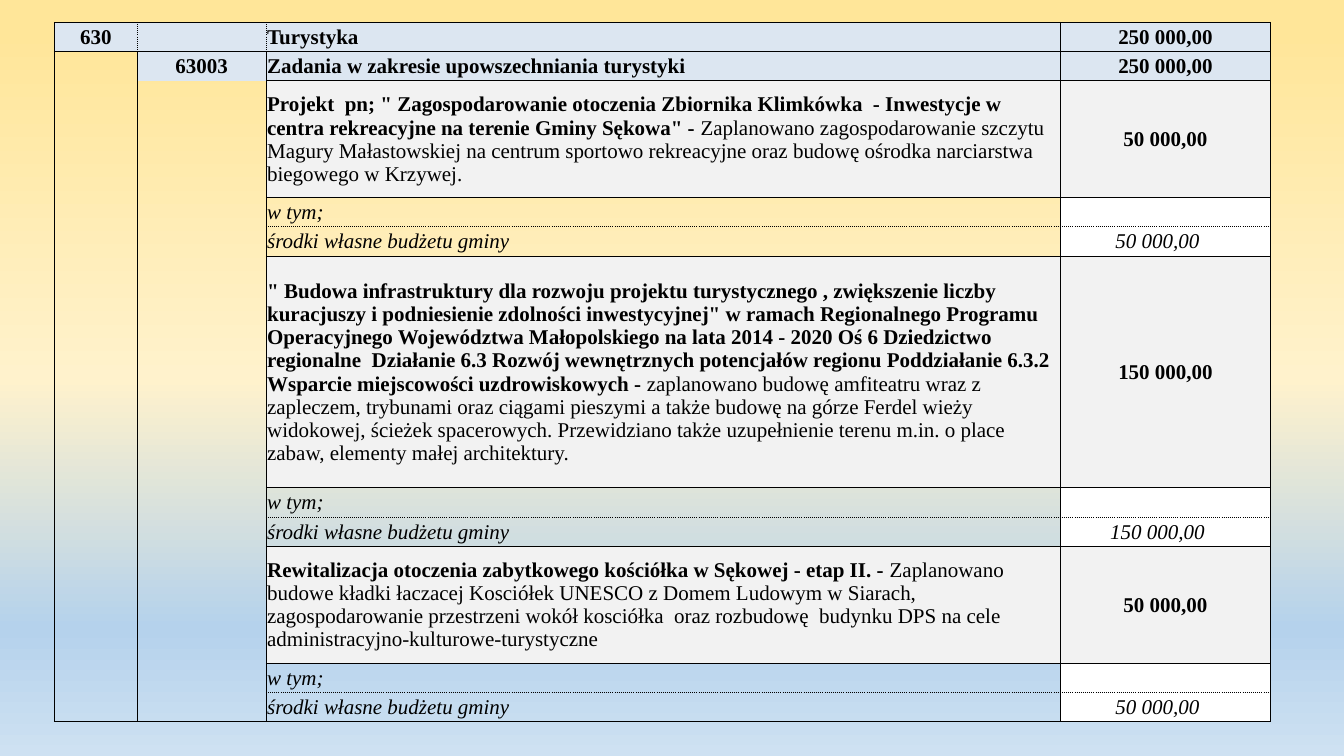
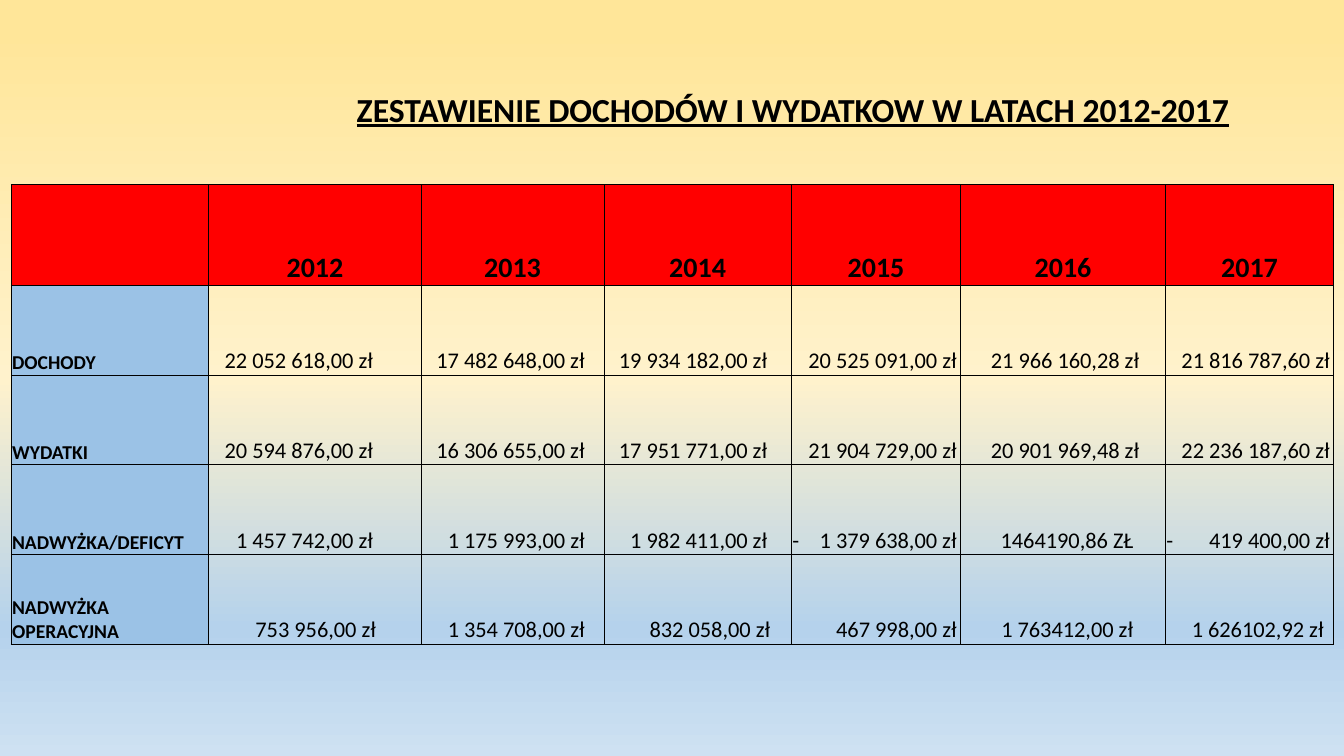
import pptx
import pptx.dml.color
import pptx.enum.text
import pptx.oxml.ns
import pptx.util
from lxml import etree

ANCHOR = pptx.enum.text.MSO_ANCHOR
ALIGN = pptx.enum.text.PP_ALIGN
inch = pptx.util.Inches
qname = pptx.oxml.ns.qn

# Shared look
BLACK, WHITE = "000000", "FFFFFF"
PALE_BLUE, PALE_GREY = "DCE6F1", "F2F2F2"
RED, BLUE = "FF0000", "9BC2E6"
BACKGROUND = [(4, "FFE699"), (50, "FFF2CC"), (83, "B5D2EC"), (100, "CEE1F2")]
THIN, THICK, DOTTED = (0.5, "solid"), (1, "solid"), (0.5, "dot")

# Tourism spending: title in bold, description, amount
TOURISM_HEADS = [("630", "", "Turystyka", "250 000,00"),
                 ("", "63003", "Zadania w zakresie upowszechniania turystyki", "250 000,00")]
TASKS = [
    ('Projekt  pn; " Zagospodarowanie otoczenia Zbiornika Klimkówka  - Inwestycje w centra '
     'rekreacyjne na terenie Gminy Sękowa" - ',
     "Zaplanowano zagospodarowanie szczytu Magury Małastowskiej na centrum sportowo "
     "rekreacyjne oraz budowę ośrodka narciarstwa biegowego w Krzywej.",
     "50 000,00"),
    ('" Budowa infrastruktury dla rozwoju projektu turystycznego , zwiększenie liczby '
     'kuracjuszy i podniesienie zdolności inwestycyjnej" w ramach Regionalnego Programu '
     "Operacyjnego Województwa Małopolskiego na lata 2014 - 2020 Oś 6 Dziedzictwo regionalne  "
     "Działanie 6.3 Rozwój wewnętrznych potencjałów regionu Poddziałanie 6.3.2 Wsparcie "
     "miejscowości uzdrowiskowych - ",
     "zaplanowano budowę amfiteatru wraz z zapleczem, trybunami oraz ciągami pieszymi a także "
     "budowę na górze Ferdel wieży widokowej, ścieżek spacerowych. Przewidziano także "
     "uzupełnienie terenu m.in. o place zabaw, elementy małej architektury.",
     "150 000,00"),
    ("Rewitalizacja otoczenia zabytkowego kościółka w Sękowej - etap II. - ",
     "Zaplanowano budowe kładki łaczacej Kosciółek UNESCO z Domem Ludowym w Siarach, "
     "zagospodarowanie przestrzeni wokół kosciółka  oraz rozbudowę  budynku DPS na cele "
     "administracyjno-kulturowe-turystyczne",
     "50 000,00"),
]
TOURISM_WIDTHS = [0.82, 1.28, 7.88, 2.08]
LINE_HEIGHT = 0.29
TASK_HEIGHTS = [1.16, 2.3, 1.16]
OWN_AMOUNT_GAP = 0.17

# Income and spending by year
SUMMARY_TITLE = "ZESTAWIENIE DOCHODÓW I WYDATKOW W LATACH 2012-2017"
SUMMARY = [
    ("", "2012", "2013", "2014", "2015", "2016", "2017"),
    ("DOCHODY", "22 052 618,00 zł", "17 482 648,00 zł", "19 934 182,00 zł",
     "20 525 091,00 zł", "21 966 160,28 zł", "21 816 787,60 zł"),
    ("WYDATKI", "20 594 876,00 zł", "16 306 655,00 zł", "17 951 771,00 zł",
     "21 904 729,00 zł", "20 901 969,48 zł", "22 236 187,60 zł"),
    ("NADWYŻKA/DEFICYT", "1 457 742,00 zł", "1 175 993,00 zł", "1 982 411,00 zł",
     "-\t1 379 638,00 zł", "1464190,86 ZŁ", "-\t419 400,00 zł"),
    ("NADWYŻKA OPERACYJNA", "753 956,00 zł", "1 354 708,00 zł", "832 058,00 zł",
     "467 998,00 zł", "1 763412,00 zł", "1 626102,92 zł"),
]
SUMMARY_WIDTHS = [1.96, 2.11, 1.81, 1.86, 1.68, 2.03, 1.67]
SUMMARY_HEIGHTS = [1] + [0.89] * 4
# Space to the right of the amounts, by column, then single exceptions
COLUMN_GAPS = [0.01, 0.48, 0.19, 0.24, 0.04, 0.26, 0.04]
CELL_GAPS = {(3, 5): 0.32, (4, 1): 0.45, (4, 3): 0.21, (4, 5): 0.32, (4, 6): 0.1}


def color(value):
    return pptx.dml.color.RGBColor.from_string(value)


def set_font(font, face, size):
    font.name, font.size = face, pptx.util.Pt(size)
    font.color.rgb = color(BLACK)


def paint_background(master):
    """Give every slide the same vertical gradient."""
    fill = master.background.fill
    fill.gradient()
    fill.gradient_angle = 270
    stops = next(master.element.iter(qname("a:gsLst")))
    for stop in list(stops):
        stops.remove(stop)
    for share, value in BACKGROUND:
        stop = etree.SubElement(stops, qname("a:gs"), pos=str(share * 1000))
        etree.SubElement(stop, qname("a:srgbClr"), val=value)


def add_grid(page, left, top, widths, heights):
    frame = page.shapes.add_table(len(heights), len(widths), inch(left), inch(top),
                                  inch(sum(widths)), inch(sum(heights)))
    grid = frame.table
    grid.first_row = grid.horz_banding = False
    for column, width in zip(grid.columns, widths):
        column.width = inch(width)
    for row, height in zip(grid.rows, heights):
        row.height = inch(height)
    return grid


def set_borders(cell, left, right, top, bottom):
    """Each side is a (points, dash) pair, or None for no line."""
    properties = cell._tc.get_or_add_tcPr()
    for index, (side, style) in enumerate(zip("LRTB", (left, right, top, bottom))):
        line = etree.Element(qname("a:ln" + side))
        properties.insert(index, line)
        if style is None:
            etree.SubElement(line, qname("a:noFill"))
            continue
        line.set("w", str(pptx.util.Pt(style[0])))
        solid = etree.SubElement(line, qname("a:solidFill"))
        etree.SubElement(solid, qname("a:srgbClr"), val=BLACK)
        etree.SubElement(line, qname("a:prstDash"), val=style[1])


def fill_cell(cell, spans, face, size, anchor, align, fill=None, italic=False, gap=0.01):
    """Write (text, bold) spans into a cell."""
    cell.margin_left = cell.margin_top = inch(0.01)
    cell.margin_right, cell.margin_bottom = inch(gap), 0
    cell.vertical_anchor = anchor
    if fill:
        cell.fill.solid()
        cell.fill.fore_color.rgb = color(fill)
    else:
        cell.fill.background()
    para = cell.text_frame.paragraphs[0]
    para.alignment = align
    set_font(para.font, face, size)
    para.font.italic = italic
    for text, bold in spans:
        if text:
            span = para.add_run()
            span.text, span.font.bold = text, bold
    return para


def tourism_rows():
    """Yield kind, four cells of spans, and height."""
    for head in TOURISM_HEADS:
        yield "head", [[(text, True)] for text in head], LINE_HEIGHT
    for (title, description, amount), height in zip(TASKS, TASK_HEIGHTS):
        yield "task", [[], [], [(title, True), (description, False)], [(amount, True)]], height
        yield "including", [[], [], [("w tym;", False)], []], LINE_HEIGHT
        yield "own", [[], [], [("środki własne budżetu gminy", False)],
                      [(amount, False)]], LINE_HEIGHT


def build_tourism(page):
    kinds, contents, heights = zip(*tourism_rows())
    last = len(kinds)
    grid = add_grid(page, 0.54, 0.22, TOURISM_WIDTHS, heights)
    for column in (0, 1):
        grid.cell(column + 1, column).merge(grid.cell(last - 1, column))

    def across(boundary, column):
        if column < 2 and 1 < boundary < last:
            return None
        return DOTTED if boundary < last and kinds[boundary] == "own" else THIN

    def down(boundary, row):
        if boundary in (0, len(TOURISM_WIDTHS)):
            return THICK
        return DOTTED if row == 0 and boundary < 3 else THIN

    for row, (kind, cells) in enumerate(zip(kinds, contents)):
        for column, spans in enumerate(cells):
            cell = grid.cell(row, column)
            if kind == "head":
                fill = None if (row, column) == (1, 0) else PALE_BLUE
            elif column < 2:
                fill = None
            elif kind == "task":
                fill = PALE_GREY
            else:
                fill = WHITE if column == 3 else None
            own_amount = kind == "own" and column == 3
            set_borders(cell, down(column, row), down(column + 1, row),
                        across(row, column), across(row + cell.span_height, column))
            fill_cell(cell, spans, "Times New Roman", 15, ANCHOR.MIDDLE,
                      ALIGN.LEFT if column == 2 else ALIGN.CENTER, fill,
                      kind in ("including", "own"), OWN_AMOUNT_GAP if own_amount else 0.01)


def build_summary(page):
    # Title
    box = page.shapes.add_textbox(inch(3.44), inch(0.83), inch(8.93), inch(0.5))
    box.text_frame.word_wrap = False
    box.text_frame.auto_size = pptx.enum.text.MSO_AUTO_SIZE.SHAPE_TO_FIT_TEXT
    para = box.text_frame.paragraphs[0]
    para.text = SUMMARY_TITLE
    set_font(para.font, "Calibri", 24)
    para.font.bold = para.font.underline = True

    # Table
    grid = add_grid(page, 0.11, 1.83, SUMMARY_WIDTHS, SUMMARY_HEIGHTS)
    for row, texts in enumerate(SUMMARY):
        for column, text in enumerate(texts):
            cell = grid.cell(row, column)
            set_borders(cell, THIN, THIN, THIN, THIN)
            negative = text.startswith("-")
            gap = 0.01
            if row == 0:
                size, align, fill = 20, ALIGN.CENTER, RED
            elif column == 0:
                size, align, fill = 14, ALIGN.LEFT, BLUE
            else:
                size, align, fill = 16, ALIGN.LEFT if negative else ALIGN.RIGHT, None
                if not negative:
                    gap = CELL_GAPS.get((row, column), COLUMN_GAPS[column])
            para = fill_cell(cell, [(text, fill is not None)], "Calibri", size,
                             ANCHOR.BOTTOM, align, fill, gap=gap)
            if negative:
                # Sign at the left, amount against a right tab
                stops = etree.Element(qname("a:tabLst"))
                stop = inch(SUMMARY_WIDTHS[column] - COLUMN_GAPS[column] - 0.01)
                etree.SubElement(stops, qname("a:tab"), pos=str(stop), algn="r")
                para._p.get_or_add_pPr().insert(0, stops)


def main():
    deck = pptx.Presentation()
    deck.slide_width, deck.slide_height = inch(13.33), inch(7.5)
    paint_background(deck.slide_master)
    for build in (build_tourism, build_summary):
        build(deck.slides.add_slide(deck.slide_layouts[6]))
    deck.save("out.pptx")


if __name__ == "__main__":
    main()
